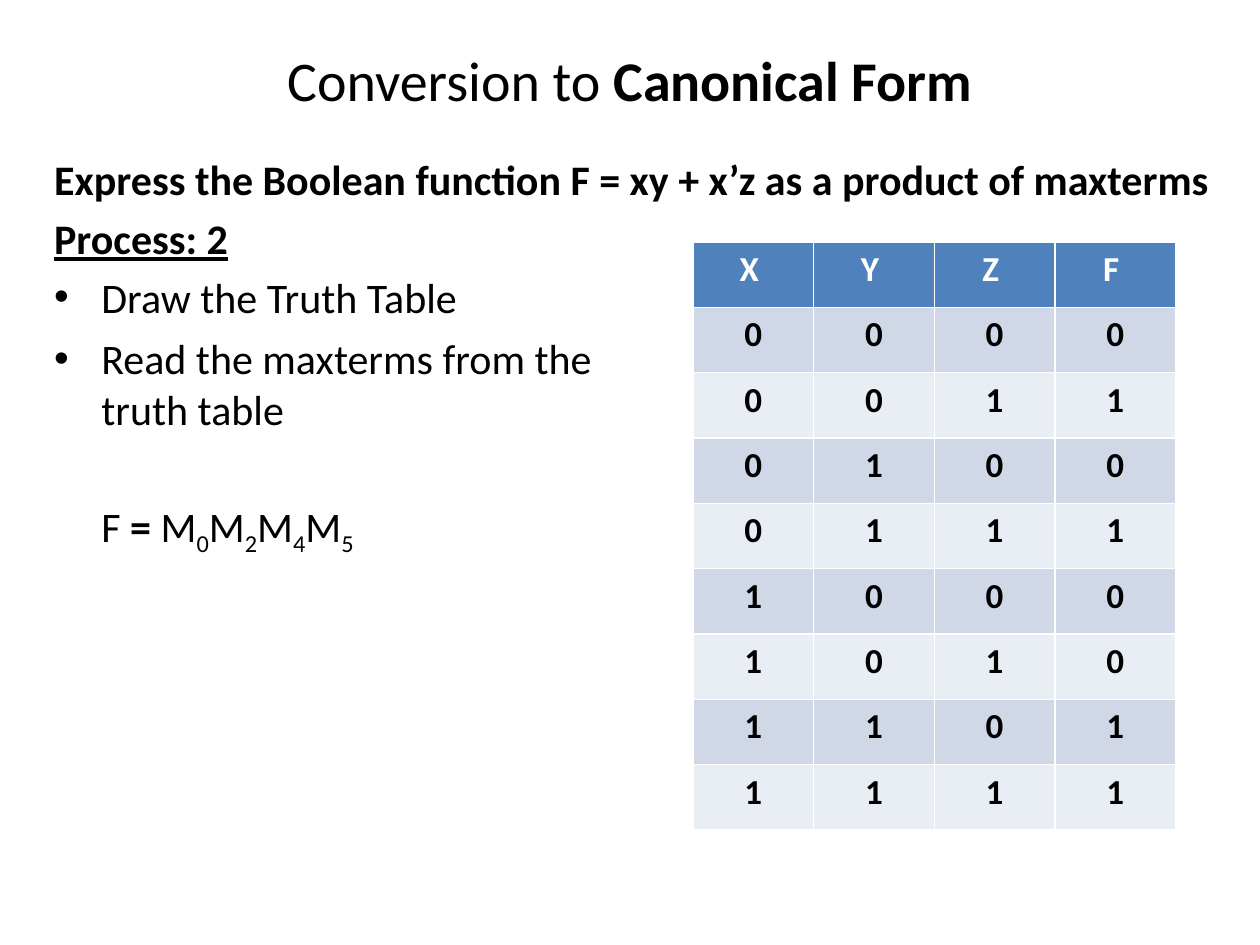
from dataclasses import dataclass
from itertools import product

from lxml import etree
from pptx import Presentation
from pptx.dml.color import RGBColor
from pptx.enum.text import MSO_ANCHOR, MSO_AUTO_SIZE, PP_ALIGN
from pptx.oxml.ns import qn
from pptx.util import Inches, Pt

CENTER = PP_ALIGN.CENTER
MIDDLE = MSO_ANCHOR.MIDDLE
NO_AUTOFIT = MSO_AUTO_SIZE.NONE
TITLE_AND_CONTENT = 1


@dataclass(frozen=True)
class Theme:
    font: str = "Calibri"
    title_size: int = 32
    body_size: int = 24
    table_size: int = 20
    ink: str = "000000"
    header_ink: str = "FFFFFF"
    header_fill: str = "4F81BD"
    band_fills: tuple = ("D0D8E8", "E9EDF4")
    formula_gap: int = 38


THEME = Theme()
VARIABLES = ("X ", "Y ", "Z ", "F ")
MAXTERMS = "0245"


def add_text(paragraph, text, *, size=THEME.body_size, color=THEME.ink,
             bold=False, underline=False, subscript=False):
    run = paragraph.add_run()
    run.text = text
    font = run.font
    font.name, font.size = THEME.font, Pt(size)
    font.bold, font.underline = bold, underline
    font.color.rgb = RGBColor.from_string(color)
    if subscript:
        run._r.get_or_add_rPr().set("baseline", "-25000")


def place(shape, left, top, width, height):
    shape.left, shape.top = Inches(left), Inches(top)
    shape.width, shape.height = Inches(width), Inches(height)


def remove_bullet(paragraph):
    etree.SubElement(paragraph._p.get_or_add_pPr(), qn("a:buNone"))


def write_title(title):
    place(title, 0.5, 0, 9, 1.25)
    title.text_frame.vertical_anchor = MIDDLE
    paragraph = title.text_frame.paragraphs[0]
    paragraph.alignment = CENTER
    add_text(paragraph, "Conversion to ", size=THEME.title_size)
    add_text(paragraph, "Canonical Form", size=THEME.title_size, bold=True)


def write_formula(paragraph):
    """Write the product of maxterms, aligned with the bullet text."""
    remove_bullet(paragraph)
    paragraph._p.get_or_add_pPr().set("indent", "0")
    paragraph.space_before = Pt(THEME.formula_gap)
    add_text(paragraph, "F ")
    add_text(paragraph, "= ", bold=True)
    for index in MAXTERMS:
        add_text(paragraph, "M")
        add_text(paragraph, index, subscript=True)


def write_process(body):
    place(body, 0.33, 1.17, 9.67, 6.33)
    frame = body.text_frame
    frame.auto_size = NO_AUTOFIT

    task = frame.paragraphs[0]
    remove_bullet(task)
    add_text(task, "Express the Boolean function F = xy + x’z as a product of maxterms",
             bold=True)

    heading = frame.add_paragraph()
    remove_bullet(heading)
    add_text(heading, "Process: 2", bold=True, underline=True)

    add_text(frame.add_paragraph(), "Draw the Truth Table")

    reading_step = frame.add_paragraph()
    add_text(reading_step, "Read the maxterms from the ")
    reading_step.add_line_break()
    add_text(reading_step, "truth table")

    write_formula(frame.add_paragraph())


def truth_rows():
    """Yield x, y, z and F = xy + x'z for every input."""
    for x, y, z in product((0, 1), repeat=3):
        yield x, y, z, y if x else z


def fill_row(cells, values, fill, color):
    for cell, value in zip(cells, values):
        cell.fill.solid()
        cell.fill.fore_color.rgb = RGBColor.from_string(fill)
        paragraph = cell.text_frame.paragraphs[0]
        paragraph.alignment = CENTER
        add_text(paragraph, str(value), size=THEME.table_size, color=color, bold=True)


def add_truth_table(slide):
    rows = list(truth_rows())
    table = slide.shapes.add_table(
        len(rows) + 1, len(VARIABLES),
        Inches(5.5), Inches(1.92), Inches(3.83), Inches(4.67)).table
    fill_row(table.rows[0].cells, VARIABLES, THEME.header_fill, THEME.header_ink)
    for number, values in enumerate(rows):
        band = THEME.band_fills[number % 2]
        fill_row(table.rows[number + 1].cells, values, band, THEME.ink)


def main():
    presentation = Presentation()
    presentation.slide_width, presentation.slide_height = Inches(10), Inches(7.5)
    slide = presentation.slides.add_slide(presentation.slide_layouts[TITLE_AND_CONTENT])
    write_title(slide.shapes.title)
    write_process(slide.placeholders[1])
    add_truth_table(slide)
    presentation.save("out.pptx")


if __name__ == "__main__":
    main()
